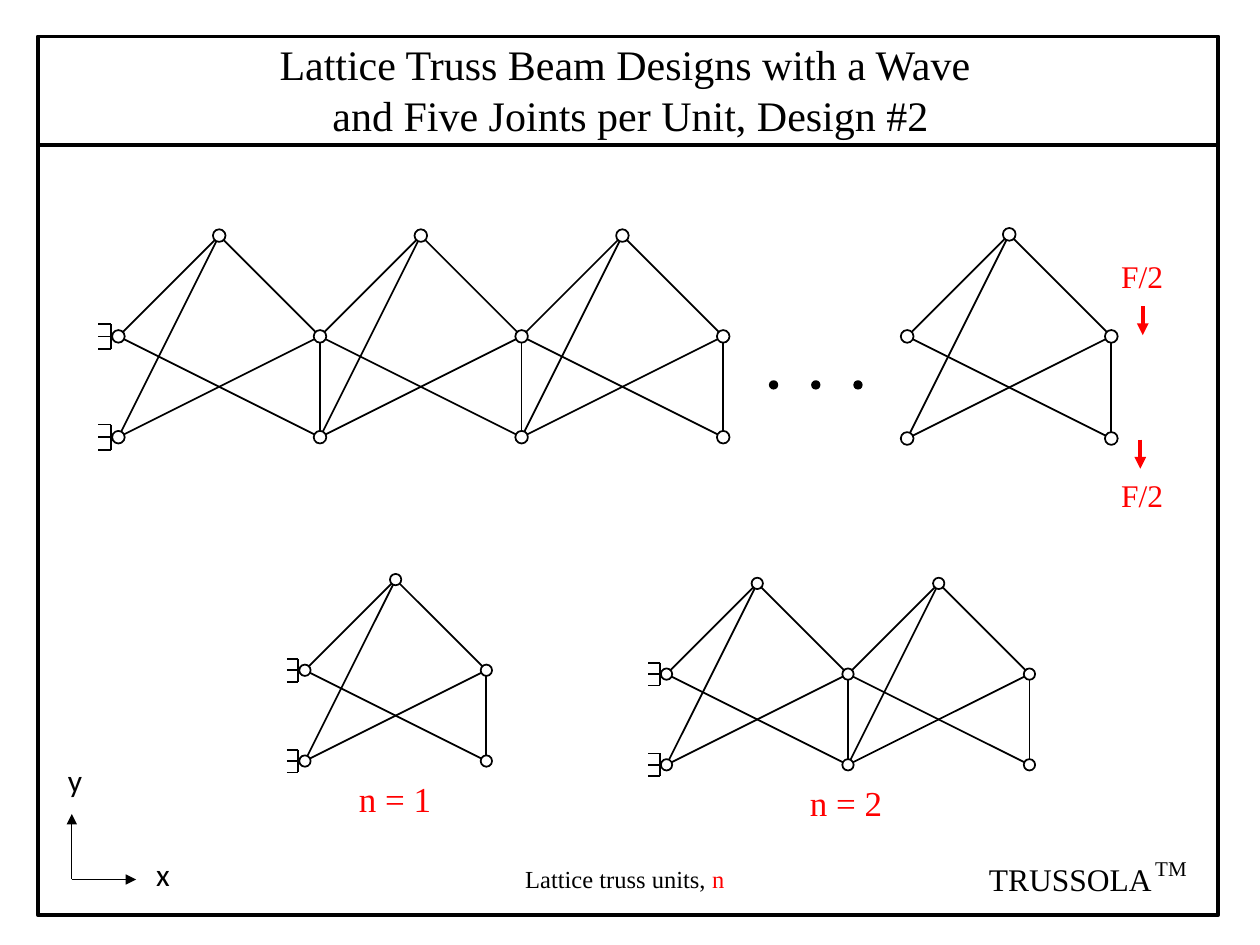
"""Build the lattice truss beam slide with its three truss diagrams."""
from pptx import Presentation, util as u
from pptx.dml.color import RGBColor
from pptx.enum import shapes, text
from pptx.oxml.xmlchemy import OxmlElement

BLACK, WHITE, RED = "000000", "FFFFFF", "FF0000"


def color(value):
    return RGBColor.from_string(value)


class Diagram:
    serif = "Times New Roman"
    sans = "Calibri"
    thin, normal, thick = 0.5, 1, 2.25

    def __init__(self, slide):
        self.slide = slide
        self.shapes = slide.shapes

    def begin_group(self):
        self.shapes = self.slide.shapes.add_group_shape().shapes

    def end_group(self):
        self.shapes = self.slide.shapes

    def line(self, start, end, width=normal, line=BLACK, arrow=False):
        points = [u.Inches(v) for v in (*start, *end)]
        sp = self.shapes.add_connector(shapes.MSO_CONNECTOR.STRAIGHT, *points)
        sp.line.color.rgb = color(line)
        sp.line.width = u.Pt(width)
        if arrow:
            tail = OxmlElement("a:tailEnd")
            tail.set("type", "triangle")
            sp.line._get_or_add_ln().append(tail)
        sp._element.spPr.append(OxmlElement("a:effectLst"))

    def shape(self, kind, left, top, width, height, fill=None, weight=normal):
        box = [u.Inches(v) for v in (left, top, width, height)]
        sp = self.shapes.add_shape(kind, *box)
        sp.shadow.inherit = False
        if fill:
            sp.fill.solid()
            sp.fill.fore_color.rgb = color(fill)
        else:
            sp.fill.background()
        sp.line.color.rgb = color(BLACK)
        sp.line.width = u.Pt(weight)

    def circle(self, center, size, fill=WHITE):
        x, y = center
        self.shape(shapes.MSO_SHAPE.OVAL, x - size / 2, y - size / 2, size, size, fill)

    def label(self, left, top, width, height, paragraphs, size, font=serif):
        box = [u.Inches(v) for v in (left, top, width, height)]
        tf = self.shapes.add_textbox(*box).text_frame
        tf.word_wrap = False
        tf.auto_size = text.MSO_AUTO_SIZE.SHAPE_TO_FIT_TEXT
        for i, runs in enumerate(paragraphs):
            p = tf.add_paragraph() if i else tf.paragraphs[0]
            for words, ink in runs:
                r = p.add_run()
                r.text = words
                r.font.name = font
                r.font.size = u.Pt(size)
                r.font.color.rgb = color(ink)
        return tf

    def support(self, joint, size):
        x, y = joint
        wall = x - 0.6 * size
        self.line((wall, y - size), (wall, y + size))
        for tick in (y - size, y, y + size):
            self.line((wall - size, tick), (wall, tick))

    def truss(self, left, top, half, units, fixed=True):
        upper = [(left + 2 * half * i, top + half) for i in range(units + 1)]
        lower = [(x, y + half) for x, y in upper]
        peaks = [(x + half, top) for x, _ in upper[:-1]]
        for i, peak in enumerate(peaks):
            self.line(lower[i], upper[i + 1])
            self.line(upper[i], lower[i + 1])
            self.line(lower[i], peak)
            self.line(upper[i], peak)
            self.line(upper[i + 1], peak)
            self.line(lower[i + 1], upper[i + 1])
        for joint in peaks + upper + lower:
            self.circle(joint, half / 8)
        if fixed:
            for joint in (upper[0], lower[0]):
                self.support(joint, half / 8)


def main():
    prs = Presentation()
    prs.slide_width, prs.slide_height = u.Inches(10), u.Inches(7.5)
    s = prs.slides.add_slide(prs.slide_layouts[6])
    d = Diagram(s)

    d.shape(shapes.MSO_SHAPE.RECTANGLE, 0.3, 0.29, 9.37, 6.97, weight=d.thick)
    d.line((0.3, 1.15), (9.67, 1.15), d.thick)
    title = d.label(2.12, 0.26, 5.88, 0.91, [
        [("Lattice Truss Beam Designs with a Wave", BLACK)],
        [("and Five Joints per Unit, Design #2", BLACK)]], 24)
    title.paragraphs[1]._p.get_or_add_pPr().set("marL", str(u.Inches(0.42)))

    d.truss(0.94, 1.87, 0.8, 3)
    d.truss(7.2, 1.86, 0.81, 1, fixed=False)
    for i in range(3):
        d.circle((6.14 + 0.335 * i, 3.055), 0.06, BLACK)
    for x, arrow_top, label_top in ((9.07, 2.43, 1.99), (9.05, 3.49, 3.73)):
        d.line((x, arrow_top), (x, arrow_top + 0.23), d.thick, RED, True)
        d.label(8.8, label_top, 0.59, 0.4, [[("F/2", RED)]], 18)

    for left, top, units, label_left in ((2.42, 4.6, 1, 2.75), (5.29, 4.63, 2, 6.33)):
        d.begin_group()
        d.truss(left, top, 0.72, units)
        d.end_group()
        d.label(label_left, top + 1.52, 0.8, 0.44, [[(f"n = {units}", RED)]], 20)

    d.begin_group()
    origin = (0.57, 6.98)
    for tip, name, left, top in (((1.08, 6.98), "x", 1.14, 6.74),
                                 ((0.57, 6.46), "y", 0.44, 5.99)):
        d.line(origin, tip, d.thin, arrow=True)
        d.label(left, top, 0.31, 0.4, [[(name, BLACK)]], 18, d.sans)
    d.end_group()

    d.label(4.07, 6.81, 1.85, 0.34,
            [[("Lattice truss units, ", BLACK), ("n", RED)]], 14)
    d.begin_group()
    d.label(7.75, 6.78, 1.52, 0.4, [[("TRUSSOLA", BLACK)]], 18)
    d.label(9.07, 6.74, 0.45, 0.3, [[("TM", BLACK)]], 12)
    d.end_group()
    prs.save("out.pptx")


if __name__ == "__main__":
    main()
